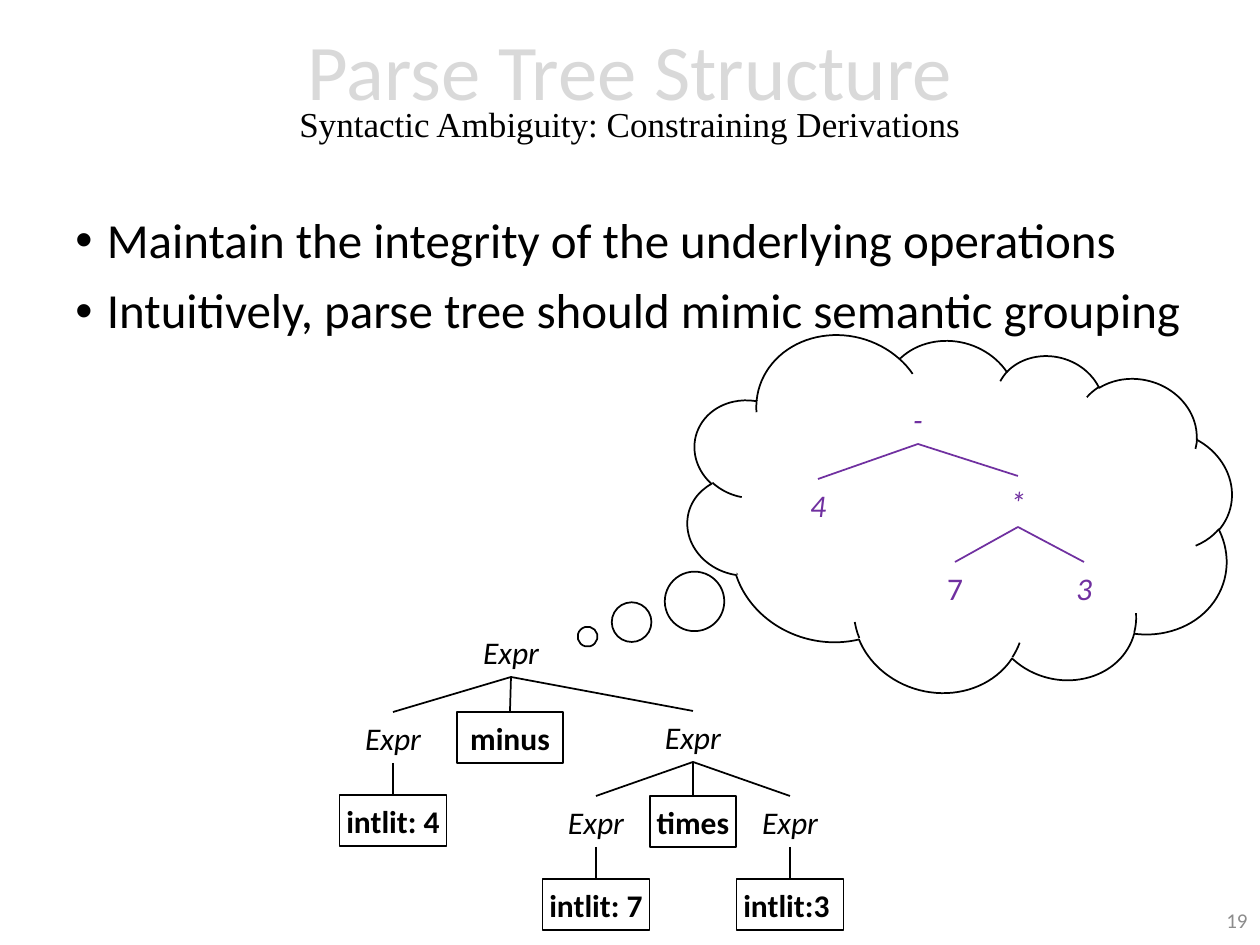
from lxml import etree
from pptx import Presentation
from pptx.dml.color import RGBColor
from pptx.enum.shapes import MSO_CONNECTOR as Connector, MSO_SHAPE as Shape
from pptx.enum.text import MSO_ANCHOR as Anchor, MSO_AUTO_SIZE as AutoSize, PP_ALIGN as Align
from pptx.oxml.ns import qn
from pptx.util import Emu, Pt

BLACK = RGBColor(0x00, 0x00, 0x00)
WHITE = RGBColor(0xFF, 0xFF, 0xFF)
PURPLE = RGBColor(0x70, 0x30, 0xA0)
LIGHT_GRAY = RGBColor(0xD9, 0xD9, 0xD9)
GRAY = RGBColor(0x8C, 0x8C, 0x8C)
PX_PER_INCH = 126
NODE_HEIGHT = 51


def px(*values):
    return [Emu(round(value * 914400 / PX_PER_INCH)) for value in values]


def add_box(kind, left, top, width, height, line_color=None):
    shape = slide.shapes.add_shape(kind, *px(left, top, width, height))
    shape.shadow.inherit = False
    shape.fill.solid()
    shape.fill.fore_color.rgb = WHITE
    if line_color is None:
        shape.line.fill.background()
    else:
        shape.line.color.rgb = line_color
        shape.line.width = Pt(1)
    return shape


presentation = Presentation()
presentation.slide_width, presentation.slide_height = px(1260, 945)
slide = presentation.slides.add_slide(presentation.slide_layouts[5])

# Title and subtitle
title = slide.shapes.title
title.left, title.top, title.width, title.height = px(87, 4, 1086, 183)
frame = title.text_frame
frame.text = "Parse Tree Structure\nSyntactic Ambiguity: Constraining Derivations"
frame.auto_size = AutoSize.NONE
frame.vertical_anchor = Anchor.MIDDLE
title_styles = [("Calibri", 45, LIGHT_GRAY), ("Times New Roman", 20, BLACK)]
for paragraph, (name, size, color) in zip(frame.paragraphs, title_styles):
    paragraph.alignment = Align.CENTER
    paragraph.line_spacing = 0.7
    paragraph.space_before = Pt(0)
    paragraph.font.name = name
    paragraph.font.size = Pt(size)
    paragraph.font.color.rgb = color

# Thought cloud, with two white patches over its inner arcs
cloud = add_box(Shape.CLOUD_CALLOUT, 685, 336, 547, 357, BLACK)
cloud.rotation = 14.6
cloud.adjustments[0] = -0.6
cloud.adjustments[1] = 0.593
for left, top, rotation in [(743, 476, 237.2), (1076, 499, 0)]:
    patch = add_box(Shape.RECTANGLE, left, top, 73, 113, WHITE)
    patch.rotation = rotation

# Bullets
body = slide.shapes.add_textbox(*px(63, 210, 1134, 725))
frame = body.text_frame
frame.word_wrap = True
frame.text = ("Maintain the integrity of the underlying operations\n"
              "Intuitively, parse tree should mimic semantic grouping")
for paragraph in frame.paragraphs:
    paragraph.line_spacing = 0.9
    paragraph.space_before = Pt(10)
    paragraph.font.name = "Calibri"
    paragraph.font.size = Pt(28)
    paragraph.font.color.rgb = BLACK
    properties = paragraph._p.get_or_add_pPr()
    properties.set("marL", "228600")
    properties.set("indent", "-228600")
    bullet_font = etree.Element(qn("a:buFont"), typeface="Arial")
    bullet = etree.Element(qn("a:buChar"), char="•")
    run_defaults = properties.find(qn("a:defRPr"))
    run_defaults.addprevious(bullet_font)
    run_defaults.addprevious(bullet)

# Slide number
number = slide.shapes.add_textbox(*px(977, 895, 283, 50))
number.text_frame.word_wrap = True
number.text_frame.vertical_anchor = Anchor.MIDDLE
paragraph = number.text_frame.paragraphs[0]
paragraph.text = "19"
paragraph.alignment = Align.RIGHT
paragraph.font.name = "Calibri"
paragraph.font.size = Pt(12)
paragraph.font.color.rgb = GRAY

# Trees: name -> (text, centre x, top, width, style, parent)
parse_tree = {
    "root": ("Expr", 511, 626, 83, "italic", None),
    "left": ("Expr", 393, 712, 83, "italic", "root"),
    "minus": ("minus", 510, 712, 106, "boxed", "root"),
    "right": ("Expr", 693, 711, 83, "italic", "root"),
    "four": ("intlit: 4", 393, 795, 107, "boxed", "left"),
    "factor 1": ("Expr", 596, 796, 83, "italic", "right"),
    "times": ("times", 693, 796, 86, "boxed", "right"),
    "factor 2": ("Expr", 790, 796, 83, "italic", "right"),
    "seven": ("intlit: 7", 596, 879, 107, "boxed", "factor 1"),
    "three": ("intlit:3 ", 790, 879, 107, "boxed", "factor 2"),
}
meaning_tree = {
    "minus": ("-", 918, 393, 35, "italic", None),
    "four": ("4", 818, 479, 42, "italic", "minus"),
    "times": ("*", 1018, 476, 42, "italic", "minus"),
    "seven": ("7", 955, 562, 42, "plain", "times"),
    "three": ("3", 1084, 562, 42, "italic", "times"),
}
for tree, color in [(parse_tree, BLACK), (meaning_tree, PURPLE)]:
    nodes = {}
    for name, (text, center, top, width, style, parent) in tree.items():
        boxed = style == "boxed"
        node = add_box(Shape.RECTANGLE, center - width / 2, top, width, NODE_HEIGHT,
                       color if boxed else None)
        frame = node.text_frame
        frame.word_wrap = False
        frame.vertical_anchor = Anchor.MIDDLE
        frame.margin_left, frame.margin_right = px(6, 6)
        paragraph = frame.paragraphs[0]
        paragraph.text = text
        paragraph.alignment = Align.CENTER
        paragraph.font.name = "Calibri"
        paragraph.font.size = Pt(18)
        paragraph.font.color.rgb = color
        paragraph.font.bold = boxed
        paragraph.font.italic = style == "italic"
        nodes[name] = node

    # Branches from each parent's bottom to its child's top
    for name, (*_, parent) in tree.items():
        if parent is None:
            continue
        branch = slide.shapes.add_connector(Connector.STRAIGHT, 0, 0, 0, 0)
        branch.begin_connect(nodes[parent], 2)
        branch.end_connect(nodes[name], 0)
        branch.line.color.rgb = color
        branch.line.width = Pt(1)
        etree.SubElement(branch._element.spPr, qn("a:effectLst"))

presentation.save("out.pptx")
